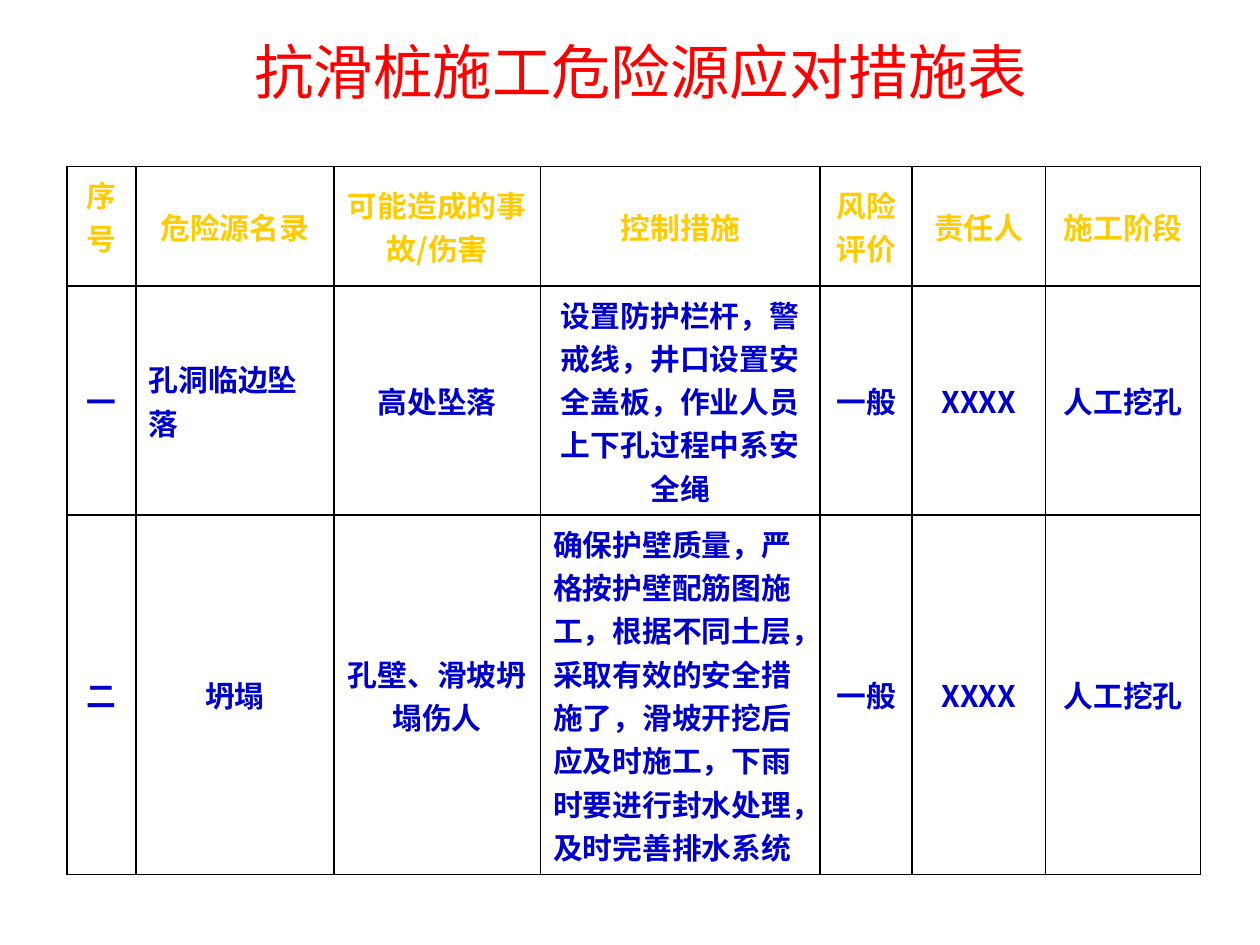
from dataclasses import dataclass

from lxml.etree import SubElement
from pptx import Presentation
from pptx.dml.color import RGBColor as Color
from pptx.enum.text import MSO_ANCHOR as Anchor, PP_ALIGN as Align
from pptx.oxml.ns import qn
from pptx.util import Inches, Pt


@dataclass(frozen=True)
class Theme:
    title_font: str = "Arial"
    table_font: str = "Noto Sans CJK SC"
    title_size: int = 34
    table_size: int = 17
    title_color: str = "FF0000"
    header_color: str = "FFCC00"
    body_color: str = "0000CC"
    border_color: str = "000000"
    border_width: int = 1


THEME = Theme()
TITLE = "抗滑桩施工危险源应对措施表"
TITLE_BOX = (0.5, 0.27, 9.17, 0.59)
TABLE_BOX = (0.53, 1.32, 9, 5.34)

# Relative widths and heights of the table grid
COLUMN_SHARES = [0.55, 1.57, 1.64, 2.22, 0.73, 1.06, 1.23]
ROW_SHARES = [0.95, 1.65, 2.74]

ROWS = [
    ["序号", "危险源名录", "可能造成的事故/伤害", "控制措施", "风险评价", "责任人", "施工阶段"],
    ["一", "孔洞临边坠落", "高处坠落",
     "设置防护栏杆，警戒线，井口设置安全盖板，作业人员上下孔过程中系安全绳",
     "一般", "XXXX", "人工挖孔"],
    ["二", "坍塌", "孔壁、滑坡坍塌伤人",
     "确保护壁质量，严格按护壁配筋图施工，根据不同土层，采取有效的安全措施了，"
     "滑坡开挖后应及时施工，下雨时要进行封水处理，及时完善排水系统",
     "一般", "XXXX", "人工挖孔"],
]
LEFT_ALIGNED = {(1, 1), (2, 3)}
TOP_ANCHORED = {(0, 0)}


def format_span(span, font, size, color, bold=False):
    span.font.name = font
    span.font.size = Pt(size)
    span.font.bold = bold
    span.font.color.rgb = Color.from_string(color)
    SubElement(span.font._element, qn("a:ea"), typeface=font)


def add_borders(cell):
    properties = cell._tc.get_or_add_tcPr()
    for side in ("lnL", "lnR", "lnT", "lnB"):
        line = SubElement(properties, qn(f"a:{side}"), w=str(Pt(THEME.border_width)))
        fill = SubElement(line, qn("a:solidFill"))
        SubElement(fill, qn("a:srgbClr"), val=THEME.border_color)


def place_title(page, box):
    title = page.shapes.title
    title.left, title.top, title.width, title.height = map(Inches, box)
    frame = title.text_frame
    frame.text = TITLE
    frame.word_wrap = True
    frame.vertical_anchor = Anchor.MIDDLE
    para = frame.paragraphs[0]
    para.alignment = Align.CENTER
    format_span(para.runs[0], THEME.title_font, THEME.title_size, THEME.title_color)


def fill_cell(cell, text, row, column):
    cell.text = text
    cell.vertical_anchor = Anchor.TOP if (row, column) in TOP_ANCHORED else Anchor.MIDDLE
    para = cell.text_frame.paragraphs[0]
    para.alignment = Align.LEFT if (row, column) in LEFT_ALIGNED else Align.CENTER
    color = THEME.body_color if row else THEME.header_color
    format_span(para.runs[0], THEME.table_font, THEME.table_size, color, bold=True)
    add_borders(cell)
    cell.fill.background()


def place_table(page, box):
    left, top, width, height = map(Inches, box)
    table = page.shapes.add_table(
        len(ROWS), len(COLUMN_SHARES), left, top, width, height).table
    table.first_row = table.horz_banding = False

    # Grid
    for column, share in zip(table.columns, COLUMN_SHARES):
        column.width = int(width * share / sum(COLUMN_SHARES))
    for row, share in zip(table.rows, ROW_SHARES):
        row.height = int(height * share / sum(ROW_SHARES))

    # Contents
    for r, texts in enumerate(ROWS):
        for c, text in enumerate(texts):
            fill_cell(table.cell(r, c), text, r, c)


def main():
    deck = Presentation()
    deck.slide_width, deck.slide_height = Inches(10), Inches(7.5)
    page = deck.slides.add_slide(deck.slide_layouts.get_by_name("Title Only"))
    place_title(page, TITLE_BOX)
    place_table(page, TABLE_BOX)
    deck.save("out.pptx")


if __name__ == "__main__":
    main()
